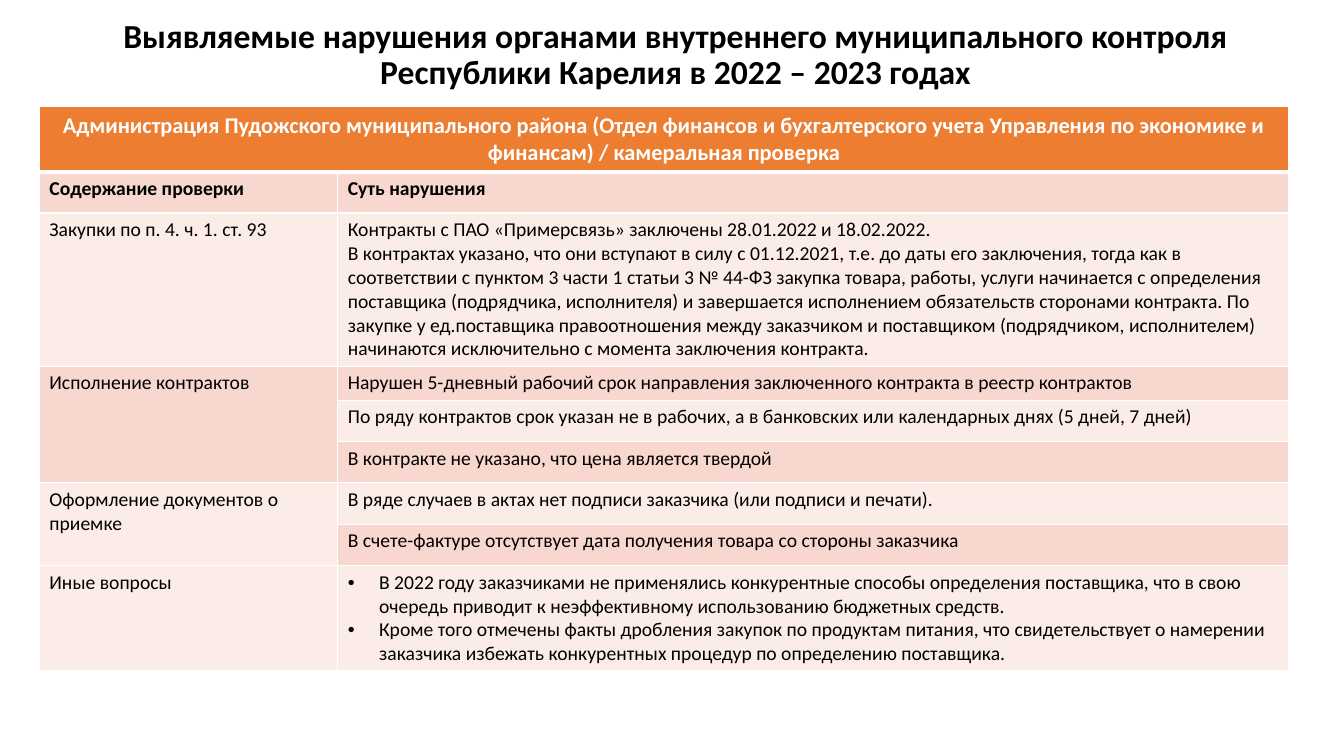
import pptx
import pptx.dml.color
import pptx.enum.text
import pptx.oxml.ns
import pptx.util
from lxml import etree

Inches = pptx.util.Inches
Pt = pptx.util.Pt
ALIGN = pptx.enum.text.PP_ALIGN
qn = pptx.oxml.ns.qn

COLORS = {"text": "000000", "white": "FFFFFF", "header": "ED7D31",
          "dark_band": "F8D7CE", "light_band": "FCECE8"}
TITLE = ("Выявляемые нарушения органами внутреннего муниципального контроля "
         "Республики Карелия в 2022 – 2023 годах")
HEADER = ("Администрация Пудожского муниципального района (Отдел финансов и бухгалтерского учета "
          "Управления по экономике и финансам) / камеральная проверка")
# Each section: label and its findings; each finding is a row height and its paragraphs.
SECTIONS = [
    ("Содержание проверки", [(0.41, ["Суть нарушения"])]),
    ("Закупки по п. 4. ч. 1. ст. 93", [(1.52, [
        "Контракты с ПАО «Примерсвязь» заключены 28.01.2022 и 18.02.2022.",
        "В контрактах указано, что они вступают в силу с 01.12.2021, т.е. до даты его заключения, "
        "тогда как в соответствии с пунктом 3 части 1 статьи 3 № 44-ФЗ закупка товара, работы, "
        "услуги начинается с определения поставщика (подрядчика, исполнителя) и завершается "
        "исполнением обязательств сторонами контракта. По закупке у ед.поставщика правоотношения "
        "между заказчиком и поставщиком (подрядчиком, исполнителем) начинаются исключительно "
        "с момента заключения контракта."])]),
    ("Исполнение контрактов", [
        (0.33, ["Нарушен 5-дневный рабочий срок направления заключенного контракта в реестр контрактов"]),
        (0.41, ["По ряду контрактов срок указан не в рабочих, а в банковских или календарных днях "
                "(5 дней, 7 дней)"]),
        (0.41, ["В контракте не указано, что цена является твердой"])]),
    ("Оформление документов о приемке", [
        (0.41, ["В ряде случаев в актах нет подписи заказчика (или подписи и печати)."]),
        (0.41, ["В счете-фактуре отсутствует дата получения товара со стороны заказчика"])]),
    ("Иные вопросы", [(1.04, [
        "В 2022 году заказчиками не применялись конкурентные способы определения поставщика, "
        "что в свою очередь приводит к неэффективному использованию бюджетных средств.",
        "Кроме того отмечены факты дробления закупок по продуктам питания, что свидетельствует "
        "о намерении заказчика избежать конкурентных процедур по определению поставщика."])]),
]


def rgb(name):
    return pptx.dml.color.RGBColor.from_string(COLORS[name])


def write_text(tf, paragraphs, size=14, color="text", bold=False, align=ALIGN.LEFT,
               spacing=None, bullet=False, font="Calibri"):
    for i, text in enumerate(paragraphs):
        p = tf.paragraphs[0] if i == 0 else tf.add_paragraph()
        p.alignment = align
        if spacing:
            p.line_spacing = spacing
        if bullet:
            pPr = p._p.get_or_add_pPr()
            pPr.set("marL", str(Inches(0.31)))
            pPr.set("indent", str(Inches(-0.31)))
            etree.SubElement(pPr, qn("a:buFont"), typeface="Arial")
            etree.SubElement(pPr, qn("a:buChar"), char="•")
        r = p.add_run()
        r.text = text
        r.font.name, r.font.size, r.font.bold = font, Pt(size), bold
        r.font.color.rgb = rgb(color)


class SlideBuilder:
    def __init__(self, prs):
        self.slide = prs.slides.add_slide(prs.slide_layouts[5])

    def title(self, text, left, top, width, height):
        sp = self.slide.shapes.title
        sp.left, sp.top, sp.width, sp.height = map(Inches, (left, top, width, height))
        tf = sp.text_frame
        tf.word_wrap = True
        tf.auto_size = pptx.enum.text.MSO_AUTO_SIZE.NONE
        tf.vertical_anchor = pptx.enum.text.MSO_ANCHOR.MIDDLE
        write_text(tf, [text], size=24, bold=True, align=ALIGN.CENTER, spacing=0.9)

    def table(self, left, top, col_widths, row_heights):
        frame = self.slide.shapes.add_table(
            len(row_heights), len(col_widths), Inches(left), Inches(top),
            Inches(sum(col_widths)), Inches(sum(row_heights)))
        table = frame.table
        for col, width in zip(table.columns, col_widths):
            col.width = Inches(width)
        for i, (row, height) in enumerate(zip(table.rows, row_heights)):
            row.height = Inches(height)
            band = "header" if i == 0 else ("light_band", "dark_band")[i % 2]
            for cell in row.cells:
                self.style_cell(cell, band, top=3 if i == 1 else 1, bottom=3 if i == 0 else 1)
        return table

    def style_cell(self, cell, fill, top, bottom):
        tcPr = cell._tc.get_or_add_tcPr()
        for side, width in (("L", 1), ("R", 1), ("T", top), ("B", bottom)):
            ln = etree.SubElement(tcPr, qn("a:ln" + side), w=str(Pt(width)))
            solid = etree.SubElement(ln, qn("a:solidFill"))
            etree.SubElement(solid, qn("a:srgbClr"), val=COLORS["white"])
        cell.fill.solid()
        cell.fill.fore_color.rgb = rgb(fill)


def main():
    prs = pptx.Presentation()
    prs.slide_width, prs.slide_height = Inches(13.33), Inches(7.5)
    s = SlideBuilder(prs)
    s.title(TITLE, 0.95, 0.23, 11.5, 0.64)

    heights = [0.64] + [height for _, findings in SECTIONS for height, _ in findings]
    table = s.table(0.39, 1.06, [2.96, 9.43], heights)
    table.cell(0, 0).merge(table.cell(0, 1))
    write_text(table.cell(0, 0).text_frame, [HEADER], size=16, color="white", bold=True,
               align=ALIGN.CENTER)
    row = 1
    for label, findings in SECTIONS:
        bold = row == 1
        if len(findings) > 1:
            table.cell(row, 0).merge(table.cell(row + len(findings) - 1, 0))
        write_text(table.cell(row, 0).text_frame, [label], bold=bold)
        for _, paragraphs in findings:
            write_text(table.cell(row, 1).text_frame, paragraphs, bold=bold,
                       bullet=label == "Иные вопросы")
            row += 1
    prs.save("out.pptx")


if __name__ == "__main__":
    main()
